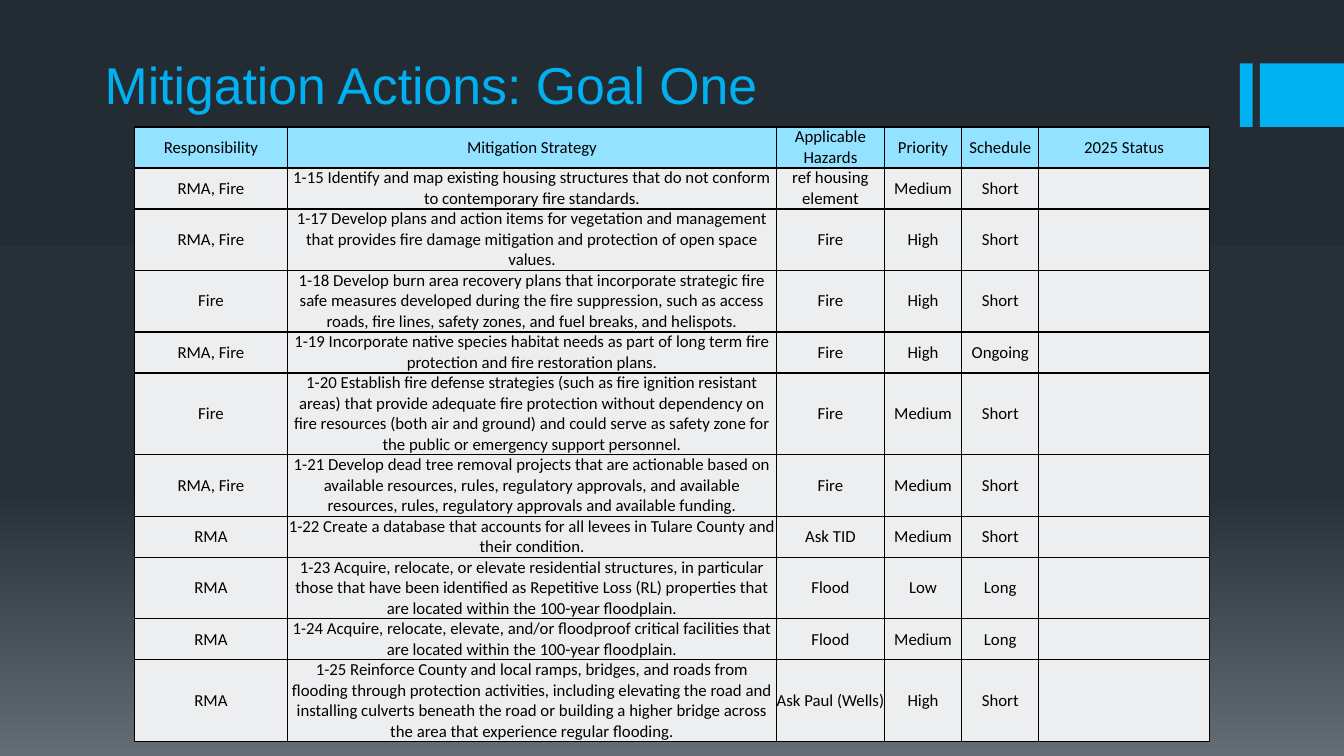
from copy import deepcopy
from dataclasses import dataclass

from lxml.etree import SubElement
from pptx import Presentation
from pptx.dml.color import RGBColor
from pptx.enum.shapes import MSO_SHAPE as Preset
from pptx.enum.text import MSO_ANCHOR as Anchor, PP_ALIGN as Align
from pptx.oxml.ns import qn
from pptx.slide import Slide
from pptx.table import _Cell as Cell
from pptx.text.text import TextFrame
from pptx.util import Inches, Pt

SLIDE_WIDTH, SLIDE_HEIGHT = Inches(13.33), Inches(7.5)
COLOURS = {
    "accent": "00B0F0",
    "header": "93E2FF",
    "body": "EDEEEF",
    "ink": "000000",
    "sky": "242C33",
    "middle": "273037",
    "ground": "636D76",
}
BACKDROP = [("sky", 0), ("middle", 0.65), ("ground", 1)]
LINE_HEIGHT = 2.67  # percent of the slide's height per line of table text


@dataclass(frozen=True)
class Area:
    """A rectangle in percent of the slide's width and height."""
    left: float
    top: float
    width: float
    height: float

    def box(self) -> tuple[int, int, int, int]:
        return (across(self.left), down(self.top),
                across(self.width), down(self.height))


@dataclass(frozen=True)
class Column:
    heading: str
    width: float


@dataclass(frozen=True)
class Action:
    lines: int
    responsibility: str
    strategy: str
    hazards: str
    priority: str
    schedule: str
    status: str = ""

    def texts(self) -> list[str]:
        return [self.responsibility, self.strategy, self.hazards,
                self.priority, self.schedule, self.status]


TITLE = Area(7.05, 7.5, 80, 8.4)
BARS = [Area(92.25, 8.4, 0.95, 8.4), Area(93.75, 8.4, 6.25, 8.4)]
TABLE = Area(10, 16.8, 80, 80)
COLUMNS = [
    Column("Responsibility", 11.4),
    Column("Mitigation Strategy", 36.38),
    Column("Applicable Hazards", 8.03),
    Column("Priority", 5.75),
    Column("Schedule", 5.75),
    Column("2025 Status", 12.69),
]
ACTIONS = [
    Action(2, "RMA, Fire",
           "1-15 Identify and map existing housing structures that do not "
           "conform to contemporary fire standards.",
           "ref housing element", "Medium", "Short"),
    Action(3, "RMA, Fire",
           "1-17 Develop plans and action items for vegetation and management "
           "that provides fire damage mitigation and protection of open space "
           "values.",
           "Fire", "High", "Short"),
    Action(3, "Fire",
           "1-18 Develop burn area recovery plans that incorporate strategic "
           "fire safe measures developed during the fire suppression, such as "
           "access roads, fire lines, safety zones, and fuel breaks, and "
           "helispots.",
           "Fire", "High", "Short"),
    Action(2, "RMA, Fire",
           "1-19 Incorporate native species habitat needs as part of long "
           "term fire protection and fire restoration plans.",
           "Fire", "High", "Ongoing"),
    Action(4, "Fire",
           "1-20 Establish fire defense strategies (such as fire ignition "
           "resistant areas) that provide adequate fire protection without "
           "dependency on fire resources (both air and ground) and could serve "
           "as safety zone for the public or emergency support personnel.",
           "Fire", "Medium", "Short"),
    Action(3, "RMA, Fire",
           "1-21 Develop dead tree removal projects that are actionable based "
           "on available resources, rules, regulatory approvals, and available "
           "resources, rules, regulatory approvals and available funding.",
           "Fire", "Medium", "Short"),
    Action(2, "RMA",
           "1-22 Create a database that accounts for all levees in Tulare "
           "County and their condition.",
           "Ask TID", "Medium", "Short"),
    Action(3, "RMA",
           "1-23 Acquire, relocate, or elevate residential structures, in "
           "particular those that have been identified as Repetitive Loss (RL) "
           "properties that are located within the 100-year floodplain.",
           "Flood", "Low", "Long"),
    Action(2, "RMA",
           "1-24 Acquire, relocate, elevate, and/or floodproof critical "
           "facilities that are located within the 100-year floodplain.",
           "Flood", "Medium", "Long"),
    Action(4, "RMA",
           "1-25 Reinforce County and local ramps, bridges, and roads from "
           "flooding through protection activities, including elevating the "
           "road and installing culverts beneath the road or building a higher "
           "bridge across the area that experience regular flooding.",
           "Ask Paul (Wells)", "High", "Short"),
]


def across(percent: float) -> int:
    return round(SLIDE_WIDTH * percent / 100)


def down(percent: float) -> int:
    return round(SLIDE_HEIGHT * percent / 100)


def colour(name: str) -> RGBColor:
    return RGBColor.from_string(COLOURS[name])


def paint_backdrop(slide: Slide) -> None:
    fill = slide.background.fill
    fill.gradient()
    fill.gradient_angle = 270
    stops = slide.element.find(".//" + qn("a:gsLst"))
    stops.append(deepcopy(stops[-1]))
    for stop, (name, position) in zip(fill.gradient_stops, BACKDROP):
        stop.color.rgb = colour(name)
        stop.position = position


def add_bar(slide: Slide, area: Area) -> None:
    bar = slide.shapes.add_shape(Preset.RECTANGLE, *area.box())
    bar.shadow.inherit = False
    bar.fill.solid()
    bar.fill.fore_color.rgb = colour("accent")
    bar.line.fill.background()


def write(frame: TextFrame, text: str, font: str, size: float, ink: str,
          align: Align) -> None:
    paragraph = frame.paragraphs[0]
    paragraph.alignment = align
    if text:
        run = paragraph.add_run()
        run.text = text
        run.font.name = font
        run.font.size = Pt(size)
        run.font.color.rgb = colour(ink)


def add_borders(cell: Cell) -> None:
    properties = cell._tc.get_or_add_tcPr()
    for side in ("a:lnL", "a:lnR", "a:lnT", "a:lnB"):
        line = SubElement(properties, qn(side), w=str(Pt(1)))
        SubElement(SubElement(line, qn("a:solidFill")), qn("a:srgbClr"),
                   val=COLOURS["ink"])


def fill_cell(cell: Cell, text: str, background: str) -> None:
    cell.margin_left = cell.margin_right = 0
    cell.margin_top = cell.margin_bottom = 0
    cell.vertical_anchor = Anchor.MIDDLE
    add_borders(cell)
    cell.fill.solid()
    cell.fill.fore_color.rgb = colour(background)
    write(cell.text_frame, text, "Calibri", 12, "ink", Align.CENTER)


def add_actions(slide: Slide) -> None:
    rows = [(2, [column.heading for column in COLUMNS], "header")]
    rows += [(action.lines, action.texts(), "body") for action in ACTIONS]
    table = slide.shapes.add_table(len(rows), len(COLUMNS), *TABLE.box()).table
    for index, column in enumerate(COLUMNS):
        table.columns[index].width = across(column.width)
    for index, (lines, texts, background) in enumerate(rows):
        table.rows[index].height = down(lines * LINE_HEIGHT)
        for cell, text in zip(table.rows[index].cells, texts):
            fill_cell(cell, text, background)


def add_title(slide: Slide, text: str) -> None:
    frame = slide.shapes.add_textbox(*TITLE.box()).text_frame
    frame.word_wrap = True
    frame.vertical_anchor = Anchor.BOTTOM
    write(frame, text, "Arial", 37, "accent", Align.LEFT)


def main() -> None:
    presentation = Presentation()
    presentation.slide_width = SLIDE_WIDTH
    presentation.slide_height = SLIDE_HEIGHT
    slide = presentation.slides.add_slide(presentation.slide_layouts[6])
    paint_backdrop(slide)
    for area in BARS:
        add_bar(slide, area)
    add_actions(slide)
    add_title(slide, "Mitigation Actions: Goal One")
    presentation.save("out.pptx")


if __name__ == "__main__":
    main()
